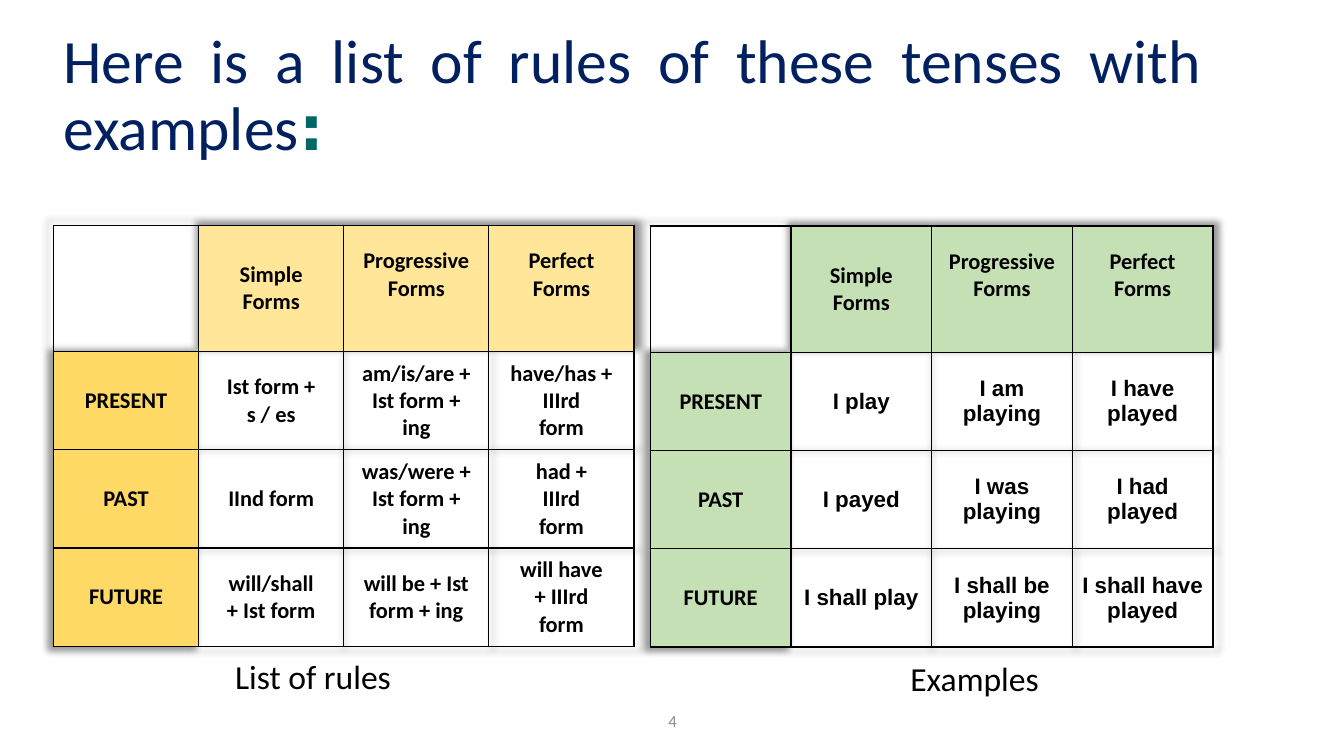
from dataclasses import dataclass

from lxml.etree import SubElement
from pptx import Presentation
from pptx.dml.color import RGBColor as RGB
from pptx.enum.text import MSO_ANCHOR as Anchor, PP_ALIGN as Align
from pptx.oxml import parse_xml
from pptx.oxml.ns import nsdecls, qn
from pptx.util import Emu, Inches, Pt


@dataclass(frozen=True)
class Theme:
    navy: str = "002060"
    teal: str = "006666"
    black: str = "000000"
    grey: str = "8C8C8C"
    light_gold: str = "FFE699"
    gold: str = "FFD966"
    green: str = "C5E0B4"
    font: str = "Calibri"
    example_font: str = "Arial"
    colon_font: str = "DejaVu Sans"
    title_size: int = 44
    caption_size: int = 24
    cell_size: int = 16
    number_size: int = 12


@dataclass(frozen=True)
class Box:
    """Left, top, width and height in percent of the slide."""
    left: float
    top: float
    width: float
    height: float

    def emu(self) -> tuple[Emu, Emu, Emu, Emu]:
        return (Emu(round(WIDTH * self.left / 100)), Emu(round(HEIGHT * self.top / 100)),
                Emu(round(WIDTH * self.width / 100)), Emu(round(HEIGHT * self.height / 100)))


@dataclass(frozen=True)
class Style:
    size: int
    color: str
    font: str
    bold: bool = False


@dataclass(frozen=True)
class TenseTable:
    box: Box
    header_fill: str
    tense_fill: str
    body_font: str
    rows: tuple[tuple[str, str, str], ...]


@dataclass(frozen=True)
class Label:
    box: Box
    text: str
    style: Style
    anchor: Anchor = Anchor.TOP


T = Theme()
WIDTH, HEIGHT = Inches(13.33), Inches(7.5)
FORMS = ("", "Simple\nForms", "Progressive\nForms", "Perfect\nForms")
TENSES = ("PRESENT", "PAST", "FUTURE")
HEADER_SHARE = 0.3
RAISED_FORMS = FORMS[2:]

TITLE_BOX = Box(3.98, 3.2, 86.27, 19.33)
TABLES = (
    TenseTable(Box(3.98, 29.8, 43.2, 55.7), T.light_gold, T.gold, T.font, (
        ("Ist form +\ns / es", "am/is/are +\nIst form +\ning", "have/has + IIIrd\nform"),
        ("IInd form", "was/were +\nIst form +\ning", "had +\nIIIrd\nform"),
        ("will/shall\n+ Ist form", "will be + Ist\nform + ing", "will have\n+ IIIrd\nform"))),
    TenseTable(Box(48.39, 29.9, 41.86, 55.7), T.green, T.green, T.example_font, (
        ("I play", "I am playing", "I have played"),
        ("I payed", "I was playing", "I had played"),
        ("I shall play", "I shall be playing", "I shall have played"))),
)
CAPTION = Style(T.caption_size, T.black, T.font)
LABELS = (
    Label(Box(13.5, 86.13, 19.58, 6.67), "List of rules", CAPTION),
    Label(Box(62.72, 86.4, 19.58, 6.67), "Examples", CAPTION),
    Label(Box(33.16, 92.67, 33.76, 5.33), "4",
          Style(T.number_size, T.grey, T.font), Anchor.MIDDLE),
)


def add_run(p, text: str, style: Style) -> None:
    r = p.add_run()
    r.text = text
    r.font.size, r.font.name, r.font.bold = Pt(style.size), style.font, style.bold
    r.font.color.rgb = RGB.from_string(style.color)


def add_lines(tf, text: str, style: Style) -> None:
    for i, line in enumerate(text.split("\n")):
        p = tf.add_paragraph() if i else tf.paragraphs[0]
        p.alignment = Align.CENTER
        add_run(p, line, style)


def add_borders(cell) -> None:
    tc_pr = cell._tc.get_or_add_tcPr()
    for i, side in enumerate(("lnL", "lnR", "lnT", "lnB")):
        tc_pr.insert(i, parse_xml(
            f'<a:{side} {nsdecls("a")} w="12700"><a:solidFill>'
            f'<a:srgbClr val="{T.black}"/></a:solidFill></a:{side}>'))


def add_shadow(tbl) -> None:
    effects = parse_xml(f'<a:effectLst {nsdecls("a")}/>')
    shadow = SubElement(effects, qn("a:outerShdw"), blurRad="63500", sx="102000",
                        sy="102000", algn="ctr", rotWithShape="0")
    color = SubElement(shadow, qn("a:prstClr"), val="black")
    SubElement(color, qn("a:alpha"), val="40000")
    tbl.tblPr.insert(0, effects)


def fill_cell(cell, text: str, style: Style, fill: str) -> None:
    cell.vertical_anchor = Anchor.MIDDLE
    if fill:
        cell.fill.solid()
        cell.fill.fore_color.rgb = RGB.from_string(fill)
    else:
        cell.fill.background()
    if text:
        add_lines(cell.text_frame, text, style)
    if text in RAISED_FORMS:
        cell.margin_bottom = Inches(0.32)
    add_borders(cell)


def draw_table(s, spec_table: TenseTable) -> None:
    left, top, width, height = spec_table.box.emu()
    grid = (FORMS, *((tense, *row) for tense, row in zip(TENSES, spec_table.rows)))
    frame = s.shapes.add_table(len(grid), len(FORMS), left, top, width, height)
    table = frame.table
    table.first_row = table.horz_banding = False
    for column in table.columns:
        column.width = Emu(width // len(FORMS))
    header = round(height * HEADER_SHARE)
    for i, row in enumerate(table.rows):
        row.height = Emu((height - header) // len(TENSES) if i else header)
    for i, texts in enumerate(grid):
        for j, text in enumerate(texts):
            fill = ""
            if i == 0 and j > 0:
                fill = spec_table.header_fill
            elif i > 0 and j == 0:
                fill = spec_table.tense_fill
            font = spec_table.body_font if i and j else T.font
            fill_cell(table.cell(i, j), text, Style(T.cell_size, T.black, font, True), fill)
    add_shadow(table._tbl)


def draw_label(s, label: Label) -> None:
    tf = s.shapes.add_textbox(*label.box.emu()).text_frame
    tf.word_wrap = True
    tf.vertical_anchor = label.anchor
    add_lines(tf, label.text, label.style)


def draw_title(s) -> None:
    sp = s.shapes.title
    sp.left, sp.top, sp.width, sp.height = TITLE_BOX.emu()
    tf = sp.text_frame
    tf.word_wrap = True
    tf.vertical_anchor = Anchor.MIDDLE
    p = tf.paragraphs[0]
    p.alignment, p.line_spacing = Align.JUSTIFY, 0.9
    add_run(p, "Here is a list of rules of these tenses with examples",
            Style(T.title_size, T.navy, T.font))
    add_run(p, ":", Style(T.title_size, T.teal, T.colon_font, True))


def main() -> None:
    prs = Presentation()
    prs.slide_width, prs.slide_height = WIDTH, HEIGHT
    s = prs.slides.add_slide(prs.slide_layouts[5])
    # Title
    draw_title(s)
    # Rules and examples
    for table in TABLES:
        draw_table(s, table)
    # Captions and slide number
    for label in LABELS:
        draw_label(s, label)
    prs.save("out.pptx")


if __name__ == "__main__":
    main()
